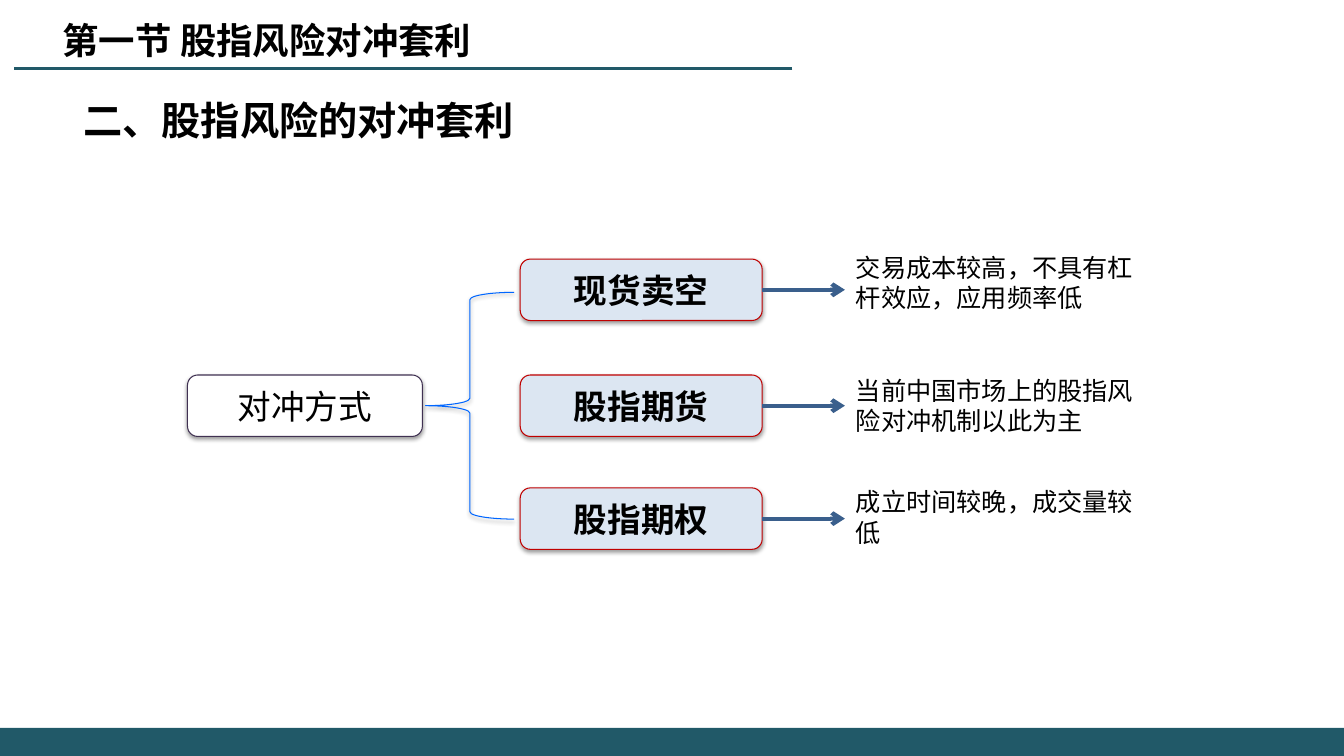
from dataclasses import dataclass

from lxml import etree
from pptx import Presentation
from pptx import util as u
from pptx.dml.color import RGBColor
from pptx.enum import shapes, text
from pptx.oxml import ns


@dataclass(frozen=True)
class Theme:
    teal: str = "215968"
    black: str = "000000"
    white: str = "FFFFFF"
    root_line: str = "403152"
    method_fill: str = "DCE6F2"
    method_line: str = "C00000"
    brace: str = "0066FF"
    arrow: str = "3A5F8C"
    latin: str = "Times New Roman"
    cjk: str = "Noto Sans CJK SC"
    title: int = 26
    heading: int = 28
    node: int = 24
    note: int = 18


T = Theme()
METHODS = [
    ("现货卖空", 0, "交易成本较高，不具有杠杆效应，应用频率低", -0.12),
    ("股指期货", 1.15, "当前中国市场上的股指风险对冲机制以此为主", 1.1),
    ("股指期权", 2.27, "成立时间较晚，成交量较低", 2.21),
]


def inches(*box):
    return [u.Inches(v) for v in box]


def apply(obj, values):
    for name, value in values.items():
        setattr(obj, name, value)


def write(sp, words, size, bold=False, font=T.latin, align=text.PP_ALIGN.LEFT,
          anchor=text.MSO_ANCHOR.TOP):
    tf = sp.text_frame
    apply(tf, {"word_wrap": True, "vertical_anchor": anchor, "auto_size": text.MSO_AUTO_SIZE.NONE})
    p = tf.paragraphs[0]
    p.alignment = align
    r = p.add_run()
    r.text = words
    apply(r.font, {"name": font, "size": u.Pt(size), "bold": bold})
    r.font.color.rgb = RGBColor.from_string(T.black)
    ea = etree.SubElement(r.font._element, ns.qn("a:ea"))
    ea.set("typeface", T.cjk)


def stroke(sp, color, width):
    sp.line.color.rgb = RGBColor.from_string(color)
    sp.line.width = u.Pt(width)


def add_shadow(sp):
    sp.shadow.inherit = False
    effects = sp._element.spPr.find(ns.qn("a:effectLst"))
    shadow = etree.SubElement(effects, ns.qn("a:outerShdw"), blurRad="40000",
                              dist="20000", dir="5400000", rotWithShape="0")
    color = etree.SubElement(shadow, ns.qn("a:srgbClr"), val=T.black)
    etree.SubElement(color, ns.qn("a:alpha"), val="38000")


def add_line(s, start, end, color, width):
    line = s.shapes.add_connector(shapes.MSO_CONNECTOR.STRAIGHT, *inches(*start, *end))
    stroke(line, color, width)
    etree.SubElement(line._element.spPr, ns.qn("a:effectLst"))
    return line


def add_node(s, box, words, fill, line, bold=False):
    sp = s.shapes.add_shape(shapes.MSO_SHAPE.ROUNDED_RECTANGLE, *inches(*box))
    sp.fill.solid()
    sp.fill.fore_color.rgb = RGBColor.from_string(fill)
    stroke(sp, line, 0.75)
    add_shadow(sp)
    write(sp, words, T.node, bold, align=text.PP_ALIGN.CENTER, anchor=text.MSO_ANCHOR.MIDDLE)
    return sp


def add_text(s, box, words, size, bold=False):
    write(s.shapes.add_textbox(*inches(*box)), words, size, bold)


def add_header(s, left, top, width):
    title = s.shapes.title
    apply(title, dict(zip(("left", "top", "width", "height"),
                          inches(left + 0.38, top, 4.41, 0.54))))
    write(title, "第一节 股指风险对冲套利", T.title, True, T.cjk)
    add_line(s, (left + width, top + 0.55), (left, top + 0.55), T.teal, 1.5)
    add_text(s, (left + 0.59, top + 0.78, 5.1, 0.57), "二、股指风险的对冲套利", T.heading, True)


def add_footer(s, left, top, width, height):
    band = s.shapes.add_shape(shapes.MSO_SHAPE.RECTANGLE, *inches(left, top, width, height))
    band.shadow.inherit = False
    band.fill.solid()
    band.fill.fore_color.rgb = RGBColor.from_string(T.teal)
    band.line.fill.background()


def add_method(s, left, top, name, node_dy, note, note_dy):
    node = add_node(s, (left, top + node_dy, 2.4, 0.61), name,
                    T.method_fill, T.method_line, True)
    mid = top + node_dy + 0.305
    arrow = add_line(s, (left + 2.4, mid), (left + 3.22, mid), T.arrow, 3)
    arrow.begin_connect(node, 3)
    etree.SubElement(arrow.line._get_or_add_ln(), ns.qn("a:tailEnd"), type="arrow")
    add_text(s, (left + 3.23, top + note_dy, 3.07, 0.71), note, T.note)


def add_tree(s, left, top):
    add_node(s, (left, top + 1.15, 2.33, 0.61), "对冲方式", T.white, T.root_line)
    brace = s.shapes.add_shape(shapes.MSO_SHAPE.LEFT_BRACE,
                               *inches(left + 2.36, top + 0.33, 0.88, 2.25))
    brace.fill.background()
    stroke(brace, T.brace, 0.75)
    add_shadow(brace)
    for method in METHODS:
        add_method(s, left + 3.3, top, *method)


def main():
    prs = Presentation()
    apply(prs, {"slide_width": u.Inches(13.33), "slide_height": u.Inches(7.5)})
    s = prs.slides.add_slide(prs.slide_layouts[5])
    add_footer(s, 0, 7.22, 13.33, 0.28)
    add_header(s, 0.14, 0.13, 7.72)
    add_tree(s, 1.86, 2.57)
    prs.save("out.pptx")


if __name__ == "__main__":
    main()
